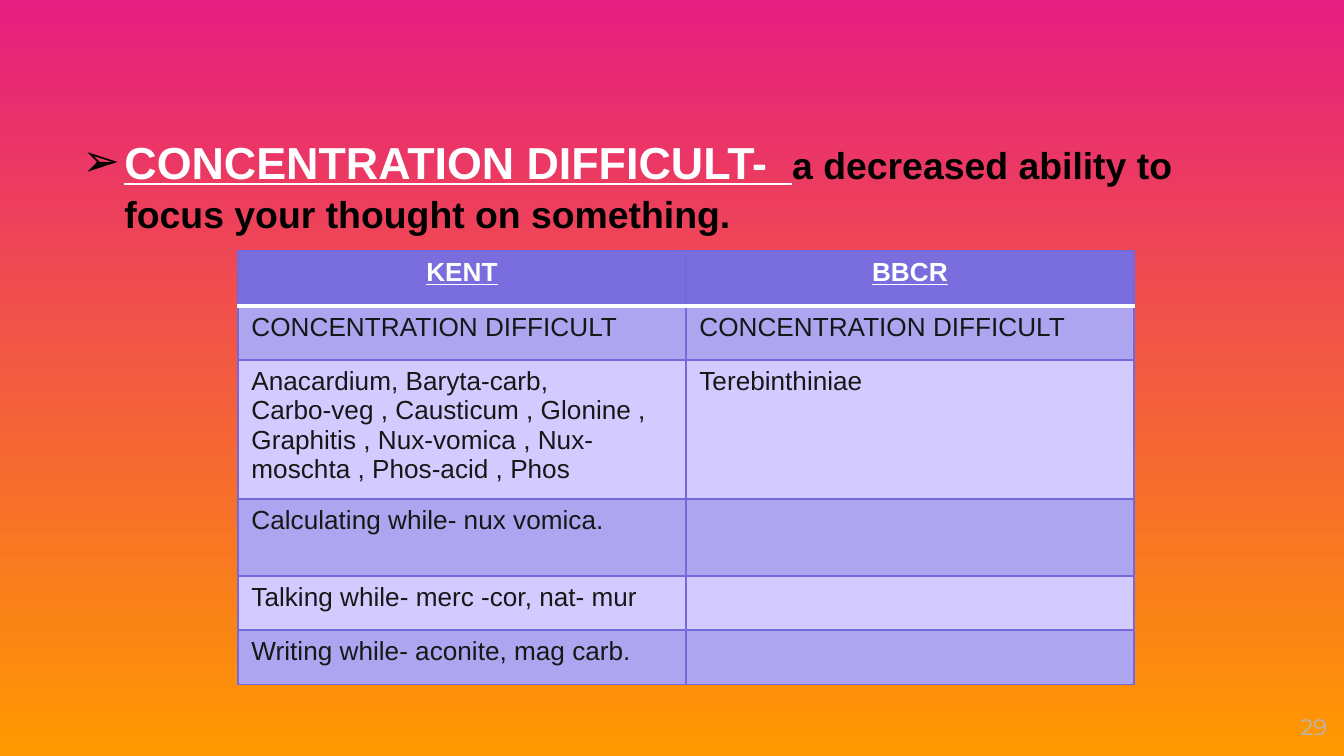
from dataclasses import dataclass

import pptx
import pptx.dml.color
import pptx.enum.text
import pptx.oxml
import pptx.oxml.ns
import pptx.util

EMU_PER_PX = 914400 / 134.4
COLORS = {
    "top": "E61E7F", "bottom": "FF9900", "white": "FFFFFF", "black": "000000",
    "number": "B7B7B7", "header": "7A6DDD", "dark_band": "AEA5F0",
    "light_band": "D3CBFF", "border": "7568DB", "cell_text": "171717",
}
ALIGN = pptx.enum.text.PP_ALIGN
ANCHOR = pptx.enum.text.MSO_ANCHOR


@dataclass
class Row:
    height: int
    cells: tuple[str, str]


ROWS = [
    Row(55, ("KENT", "BBCR")),
    Row(54, ("CONCENTRATION DIFFICULT", "CONCENTRATION DIFFICULT")),
    Row(139, ("Anacardium, Baryta-carb,\nCarbo-veg , Causticum , Glonine , "
              "Graphitis , Nux-vomica , Nux-moschta , Phos-acid , Phos",
              "Terebinthiniae")),
    Row(77, ("Calculating while- nux vomica.", "")),
    Row(54, ("Talking while- merc -cor, nat- mur", "")),
    Row(55, ("Writing while- aconite, mag carb.", "")),
]


def px(length: int) -> pptx.util.Emu:
    return pptx.util.Emu(round(length * EMU_PER_PX))


def rgb(name: str) -> pptx.dml.color.RGBColor:
    return pptx.dml.color.RGBColor.from_string(COLORS[name])


def style_font(font, size: int, color: str, name: str = "Arial", bold: bool = False) -> None:
    font.size = pptx.util.Pt(size)
    font.name = name
    font.bold = bold
    font.color.rgb = rgb(color)


def paint_background(slide) -> None:
    fill = slide.background.fill
    fill.gradient()
    fill.gradient_angle = 270
    for stop, color in zip(fill.gradient_stops, ("top", "bottom")):
        stop.color.rgb = rgb(color)


def add_bullet(paragraph, character: str, color: str, indent: int) -> None:
    properties = paragraph._p.get_or_add_pPr()
    properties.set("marL", str(px(indent)))
    properties.set("indent", str(-px(indent)))
    namespace = pptx.oxml.ns.nsdecls("a")
    for xml in (
        f'<a:buClr {namespace}><a:srgbClr val="{COLORS[color]}"/></a:buClr>',
        f'<a:buFont {namespace} typeface="Arial"/>',
        f'<a:buChar {namespace} char="{character}"/>',
    ):
        properties.append(pptx.oxml.parse_xml(xml))


def write_heading(placeholder) -> None:
    placeholder.left, placeholder.top = px(69), px(124)
    placeholder.width, placeholder.height = px(1207), px(113)
    frame = placeholder.text_frame
    frame.auto_size = pptx.enum.text.MSO_AUTO_SIZE.NONE
    frame.vertical_anchor = ANCHOR.TOP
    paragraph = frame.paragraphs[0]
    add_bullet(paragraph, "➢", "black", 42)
    paragraph.space_before = pptx.util.Pt(0)
    paragraph.line_spacing = 1.07
    term = paragraph.add_run()
    term.text = "CONCENTRATION DIFFICULT-  "
    style_font(term.font, 24, "white", bold=True)
    term.font.underline = True
    meaning = paragraph.add_run()
    meaning.text = "a decreased ability to focus your thought on something."
    style_font(meaning.font, 20, "black", bold=True)


def set_border(cell, side: str, color: str, width: float) -> None:
    """Append one border; side is L, R, T or B, to be set in that order."""
    cell._tc.get_or_add_tcPr().append(pptx.oxml.parse_xml(
        f'<a:ln{side} {pptx.oxml.ns.nsdecls("a")} w="{pptx.util.Pt(width)}">'
        f'<a:solidFill><a:srgbClr val="{COLORS[color]}"/></a:solidFill></a:ln{side}>'))


def format_cell(cell, text: str, row_number: int) -> None:
    is_header = row_number == 0
    white_side = {0: "B", 1: "T"}.get(row_number)
    for side in "LRTB":
        if side == white_side:
            set_border(cell, side, "white", 2)
        else:
            set_border(cell, side, "border", 0.75)
    band = "dark_band" if row_number % 2 else "light_band"
    cell.fill.solid()
    cell.fill.fore_color.rgb = rgb("header" if is_header else band)
    cell.text = text
    for paragraph in cell.text_frame.paragraphs:
        paragraph.alignment = ALIGN.CENTER if is_header else ALIGN.LEFT
        style_font(paragraph.font, 14, "white" if is_header else "cell_text", bold=is_header)
        paragraph.font.underline = is_header


def add_remedy_table(slide, rows: list[Row]) -> None:
    total_height = sum(row.height for row in rows)
    table = slide.shapes.add_table(
        len(rows), 2, px(238), px(251), px(896), px(total_height)).table
    table.horz_banding = False
    for row_number, row in enumerate(rows):
        table.rows[row_number].height = px(row.height)
        for column_number, text in enumerate(row.cells):
            format_cell(table.cell(row_number, column_number), text, row_number)


def add_page_number(slide, number: str) -> None:
    frame = slide.shapes.add_textbox(px(1246), px(698), px(81), px(58)).text_frame
    frame.word_wrap = True
    frame.vertical_anchor = ANCHOR.MIDDLE
    frame.margin_left = frame.margin_right = frame.margin_top = frame.margin_bottom = 0
    paragraph = frame.paragraphs[0]
    paragraph.text = number
    paragraph.alignment = ALIGN.RIGHT
    style_font(paragraph.font, 12, "number", name="Montserrat")


def main() -> None:
    presentation = pptx.Presentation()
    presentation.slide_width, presentation.slide_height = px(1344), px(756)
    slide = presentation.slides.add_slide(presentation.slide_layouts[1])
    title = slide.shapes.title._element
    title.getparent().remove(title)
    paint_background(slide)
    add_page_number(slide, "29")
    write_heading(slide.placeholders[1])
    add_remedy_table(slide, ROWS)
    presentation.save("out.pptx")


if __name__ == "__main__":
    main()
